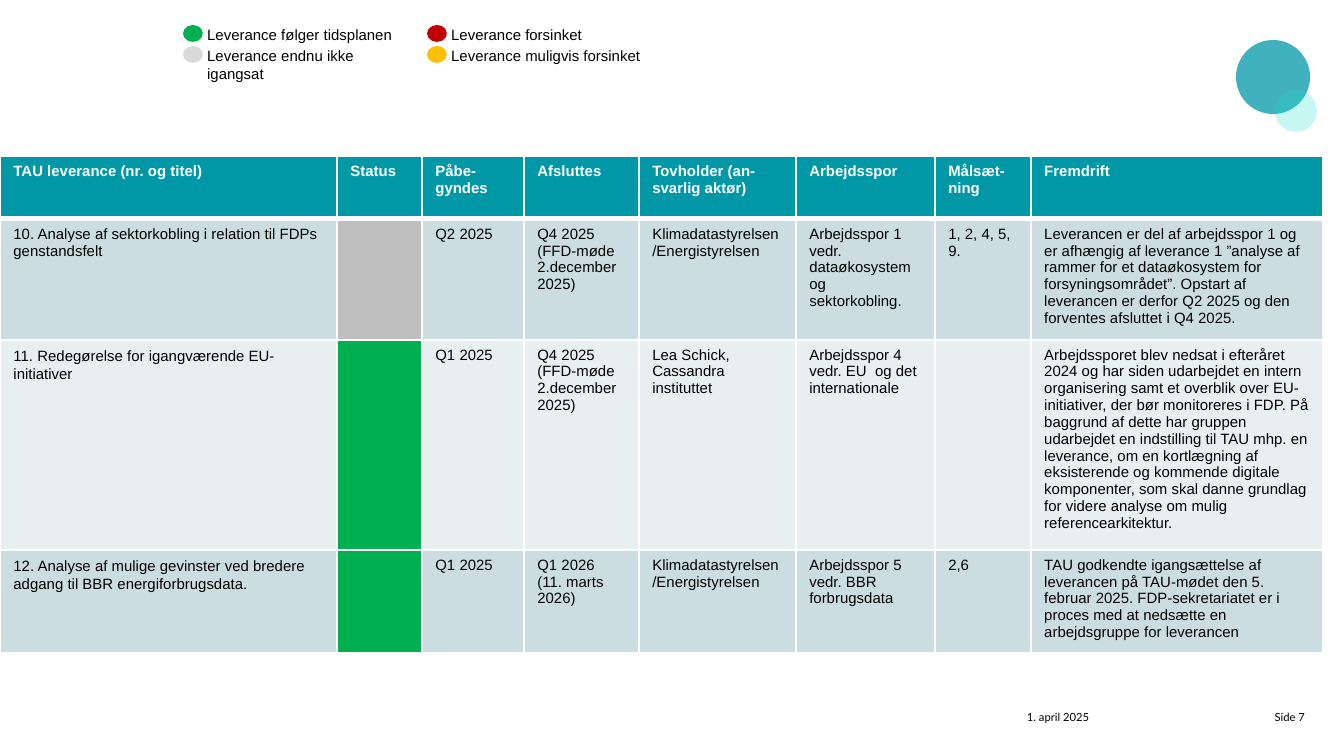
import pptx
import pptx.dml.color
import pptx.enum.shapes
import pptx.enum.text
import pptx.oxml
import pptx.oxml.ns
import pptx.util

EMU_PER_PX = 9144000 / 1344
COLORS = {
    "teal": "0097A7", "mint": "1DE2CD", "white": "FFFFFF", "black": "000000",
    "band_dark": "CCDDE1", "band_light": "E7EFF1",
    "on_time": "00B050", "late": "C00000", "maybe_late": "FFC000",
    "not_started": "D9D9D9", "status_gray": "BFBFBF",
}
BODY = {"name": "Arial", "size": pptx.util.Pt(8), "bold": False}
HEADER = {**BODY, "bold": True}
FOOTER = {"name": "Lato", "size": pptx.util.Pt(6)}
INSETS = {"margin_left": 12, "margin_right": 12, "margin_top": 6, "margin_bottom": 6}

CIRCLES = [(1236, 40, 74, "teal", 75), (1275, 90, 42, "mint", 25)]
LEGEND = [
    (429, 27, "late", "Leverance forsinket"),
    (429, 48, "maybe_late", "Leverance muligvis forsinket"),
    (185, 48, "not_started", "Leverance endnu ikke igangsat"),
    (185, 27, "on_time", "Leverance følger tidsplanen"),
]
COLUMN_WIDTHS = [337, 85, 102, 115, 157, 139, 96, 292]
ROW_HEIGHTS = [63, 114, 199, 97]
STATUS_COLUMN = 1
STATUSES = ["status_gray", "on_time", "on_time"]
ROWS = [
    ["TAU leverance (nr. og titel)", "Status", "Påbe-gyndes", "Afsluttes",
     "Tovholder (an-svarlig aktør)", "Arbejdsspor", "Målsæt-ning", "Fremdrift"],
    ["10. Analyse af sektorkobling i relation til FDPs genstandsfelt", "",
     "Q2 2025", "Q4 2025\n(FFD-møde 2.december 2025)",
     "Klimadatastyrelsen/Energistyrelsen",
     "Arbejdsspor 1 vedr. dataøkosystem og sektorkobling.", "1, 2, 4, 5, 9.",
     "Leverancen er del af arbejdsspor 1 og er afhængig af leverance 1 ”analyse af "
     "rammer for et dataøkosystem for forsyningsområdet”. Opstart af leverancen er "
     "derfor Q2 2025 og den forventes afsluttet i Q4 2025."],
    ["11. Redegørelse for igangværende EU-initiativer", "",
     "Q1 2025", "Q4 2025\n(FFD-møde 2.december 2025)",
     "Lea Schick, Cassandra instituttet",
     "Arbejdsspor 4 vedr. EU  og det internationale", "",
     "Arbejdssporet blev nedsat i efteråret 2024 og har siden udarbejdet en intern "
     "organisering samt et overblik over EU-initiativer, der bør monitoreres i FDP. "
     "På baggrund af dette har gruppen udarbejdet en indstilling til TAU mhp. en "
     "leverance, om en kortlægning af eksisterende og kommende digitale komponenter, "
     "som skal danne grundlag for videre analyse om mulig referencearkitektur."],
    ["12. Analyse af mulige gevinster ved bredere adgang til BBR energiforbrugsdata.", "",
     "Q1 2025", "Q1 2026\n(11. marts 2026)",
     "Klimadatastyrelsen/Energistyrelsen",
     "Arbejdsspor 5 vedr. BBR forbrugsdata", "2,6",
     "TAU godkendte igangsættelse af leverancen på TAU-mødet den 5. februar 2025. "
     "FDP-sekretariatet er i proces med at nedsætte en arbejdsgruppe for leverancen"],
]


def px(n):
    return pptx.util.Emu(round(n * EMU_PER_PX))


def rgb(color):
    return pptx.dml.color.RGBColor.from_string(COLORS[color])


def write(p, text, font, color="black"):
    """Fill a paragraph with formatted runs, one per line of text."""
    for i, line in enumerate(text.split("\n")):
        if i:
            p.add_line_break()
        r = p.add_run()
        r.text = line
        for name, value in font.items():
            setattr(r.font, name, value)
        r.font.color.rgb = rgb(color)


def add_ellipse(s, x, y, w, h, color, opacity=None):
    sp = s.shapes.add_shape(pptx.enum.shapes.MSO_SHAPE.OVAL, px(x), px(y), px(w), px(h))
    sp.shadow.inherit = False
    sp.fill.solid()
    sp.fill.fore_color.rgb = rgb(color)
    if opacity is None:
        sp.line.color.rgb = rgb(color)
        sp.line.width = pptx.util.Pt(2)
    else:
        sp.line.fill.background()
        clr = next(sp.fill._xPr.iter(pptx.oxml.ns.qn("a:srgbClr")))
        clr.append(pptx.oxml.parse_xml(
            f'<a:alpha {pptx.oxml.ns.nsdecls("a")} val="{opacity * 1000}"/>'))


def add_text(s, x, y, w, h, text, font, wrap=True, align=None, insets=None):
    tf = s.shapes.add_textbox(px(x), px(y), px(w), px(h)).text_frame
    tf.word_wrap = wrap
    for name, value in (insets or {}).items():
        setattr(tf, name, px(value))
    p = tf.paragraphs[0]
    p.alignment = align
    write(p, text, font)


def add_borders(cell, widths):
    """Draw white borders; widths maps a side (L, R, T, B) to points."""
    tcPr = cell._tc.get_or_add_tcPr()
    for side, width in widths.items():
        tcPr.append(pptx.oxml.parse_xml(
            f'<a:ln{side} {pptx.oxml.ns.nsdecls("a")} w="{pptx.util.Pt(width)}">'
            f'<a:solidFill><a:srgbClr val="{COLORS["white"]}"/></a:solidFill></a:ln{side}>'))


def cell_color(row, column):
    if row == 0:
        return "teal"
    if column == STATUS_COLUMN:
        return STATUSES[row - 1]
    return "band_dark" if row % 2 else "band_light"


def add_deliverables(s, x, y):
    table = s.shapes.add_table(
        len(ROWS), len(COLUMN_WIDTHS), px(x), px(y),
        px(sum(COLUMN_WIDTHS)), px(sum(ROW_HEIGHTS))).table
    for column, width in zip(table.columns, COLUMN_WIDTHS):
        column.width = px(width)
    for row, height in zip(table.rows, ROW_HEIGHTS):
        row.height = px(height)
    for i, texts in enumerate(ROWS):
        for j, text in enumerate(texts):
            cell = table.cell(i, j)
            add_borders(cell, {"L": 1, "R": 1, "T": 3 if i == 1 else 1, "B": 3 if i == 0 else 1})
            cell.fill.solid()
            cell.fill.fore_color.rgb = rgb(cell_color(i, j))
            p = cell.text_frame.paragraphs[0]
            if text:
                write(p, text, BODY if i else HEADER, "black" if i else "white")
            if j == 0 and i > 1:
                p.line_spacing = 1.07
                p.space_after = pptx.util.Pt(5)


def add_legend(s):
    for x, y, color, label in LEGEND:
        add_ellipse(s, x, y, 16, 13, color)
        add_text(s, x + 9, y - 8, 220, 32, label, BODY, wrap=False)


def main():
    prs = pptx.Presentation()
    prs.slide_width, prs.slide_height = px(1344), px(756)
    s = prs.slides.add_slide(prs.slide_layouts[6])
    for x, y, size, color, opacity in CIRCLES:
        add_ellipse(s, x, y, size, size, color, opacity)
    add_text(s, 1015, 704, 181, 40, "1. april 2025", FOOTER, insets=INSETS)
    add_text(s, 1199, 704, 118, 40, "Side 7", FOOTER,
             align=pptx.enum.text.PP_ALIGN.RIGHT, insets=INSETS)
    add_deliverables(s, 0, 156)
    add_legend(s)
    prs.save("out.pptx")


if __name__ == "__main__":
    main()
